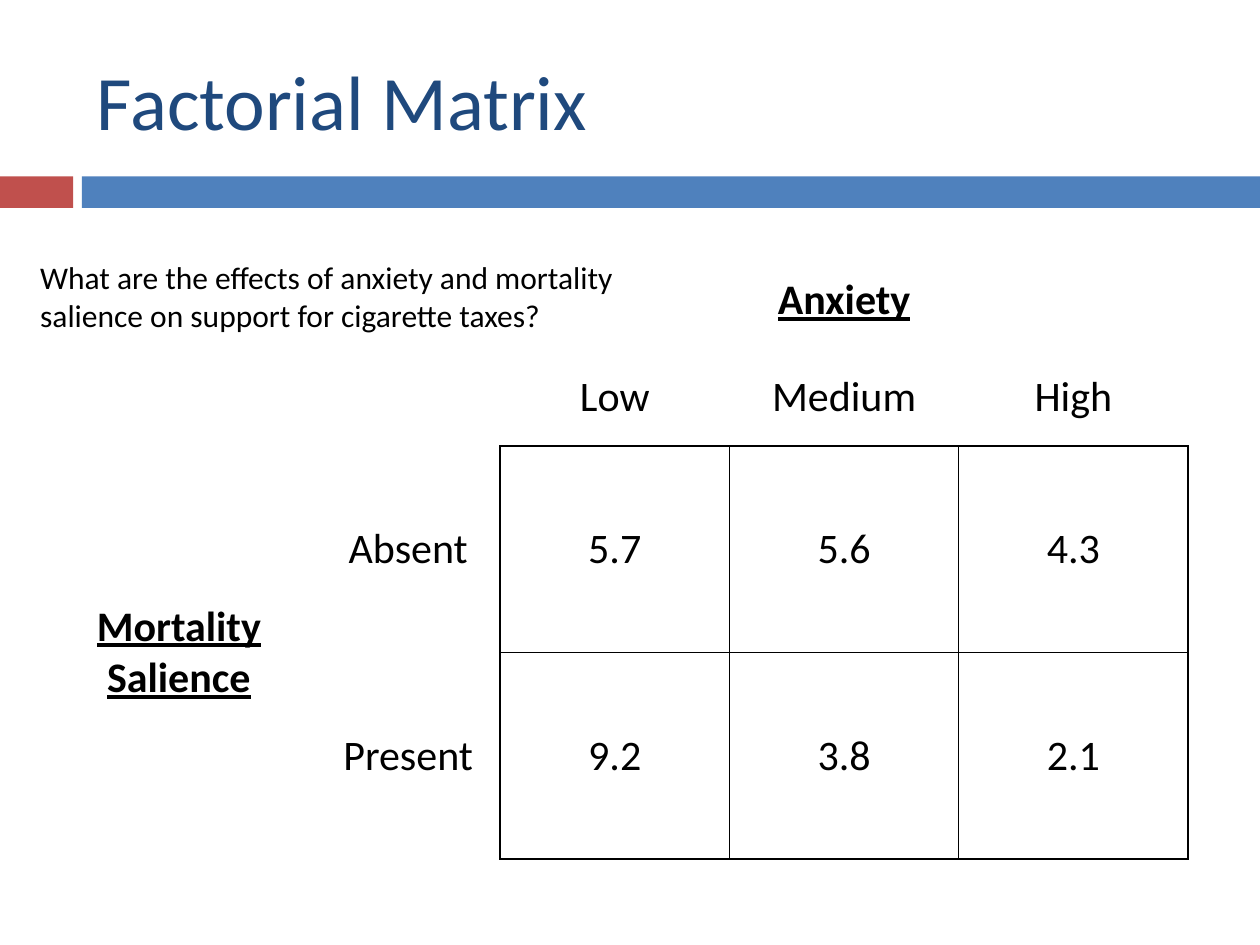
"""Build the factorial matrix slide."""
from lxml.etree import SubElement
from pptx import Presentation
from pptx.dml.color import RGBColor
from pptx.enum.shapes import MSO_SHAPE
from pptx.enum.text import MSO_ANCHOR, PP_ALIGN
from pptx.oxml.ns import qn
from pptx.util import Inches, Pt

RED = RGBColor(0xC0, 0x50, 0x4D)
BLUE = RGBColor(0x4F, 0x81, 0xBD)
NAVY = RGBColor(0x1F, 0x49, 0x7D)
BLACK = RGBColor(0, 0, 0)
PLAIN = "{2D5ABB26-0587-4C30-8999-92F81FD0307C}"

COLS = [2.18, 1.46, 1.82, 1.82, 1.82]
ROWS = [0.77, 0.77, 1.64, 1.64]
CELLS = [
    ["", "", "Anxiety", "", ""],
    ["", "", "Low", "Medium", "High"],
    ["Mortality\nSalience", "Absent", "5.7", "5.6", "4.3"],
    ["", "Present", "9.2", "3.8", "2.1"],
]
HEADS = {"Anxiety", "Mortality\nSalience"}


def write(frame, text, size, color=BLACK, align=PP_ALIGN.LEFT, head=False):
    par = frame.paragraphs[0]
    par.text = text
    par.alignment = align
    font = par.font
    font.name = "Calibri"
    font.size = Pt(size)
    font.color.rgb = color
    font.bold = font.underline = head


def add_bar(slide, left, width, color):
    bar = slide.shapes.add_shape(
        MSO_SHAPE.RECTANGLE, Inches(left), Inches(1.4), Inches(width), Inches(0.25))
    bar.shadow.inherit = False
    bar.fill.solid()
    bar.fill.fore_color.rgb = color
    bar.line.fill.background()


def add_text(slide, box, text, size, color, anchor, wrap):
    frame = slide.shapes.add_textbox(*map(Inches, box)).text_frame
    frame.word_wrap = wrap
    frame.vertical_anchor = anchor
    write(frame, text, size, color)


def add_edges(cell, sides):
    props = cell._tc.get_or_add_tcPr()
    for side in sides:
        line = SubElement(props, qn(f"a:ln{side}"), w=str(Pt(1)))
        fill = SubElement(line, qn("a:solidFill"))
        SubElement(fill, qn("a:srgbClr"), val=str(BLACK))


def pick_edges(row, col):
    if row > 1 and col > 1:
        return "LRTB"
    if row > 1 and col == 1:
        return "R"
    return "B" if row == 1 and col > 1 else ""


def add_matrix(slide):
    frame = slide.shapes.add_table(
        len(ROWS), len(COLS), Inches(0.33), Inches(2),
        Inches(sum(COLS)), Inches(sum(ROWS)))
    table = frame.table
    table.first_row = table.horz_banding = False
    table._tbl.tblPr.find(qn("a:tableStyleId")).text = PLAIN
    for col, width in zip(table.columns, COLS):
        col.width = Inches(width)
    for row, height in zip(table.rows, ROWS):
        row.height = Inches(height)
    for i, texts in enumerate(CELLS):
        for j, text in enumerate(texts):
            cell = table.cell(i, j)
            cell.vertical_anchor = MSO_ANCHOR.MIDDLE
            add_edges(cell, pick_edges(i, j))
            cell.fill.background()
            if text:
                write(cell.text_frame, text, 24, BLACK, PP_ALIGN.CENTER, text in HEADS)
    table.cell(0, 2).merge(table.cell(0, 4))
    table.cell(2, 0).merge(table.cell(3, 0))


def main():
    deck = Presentation()
    deck.slide_width, deck.slide_height = Inches(10), Inches(7.5)
    slide = deck.slides.add_slide(deck.slide_layouts[6])
    add_bar(slide, 0, 0.58, RED)
    add_bar(slide, 0.65, 9.35, BLUE)
    add_text(slide, (0.67, 0.25, 8.92, 1.08), "Factorial Matrix",
             44, NAVY, MSO_ANCHOR.MIDDLE, True)
    add_matrix(slide)
    add_text(slide, (0.22, 2, 4.91, 0.71),
             "What are the effects of anxiety and mortality\n"
             "salience on support for cigarette taxes?",
             18, BLACK, MSO_ANCHOR.TOP, False)
    deck.save("out.pptx")


if __name__ == "__main__":
    main()
